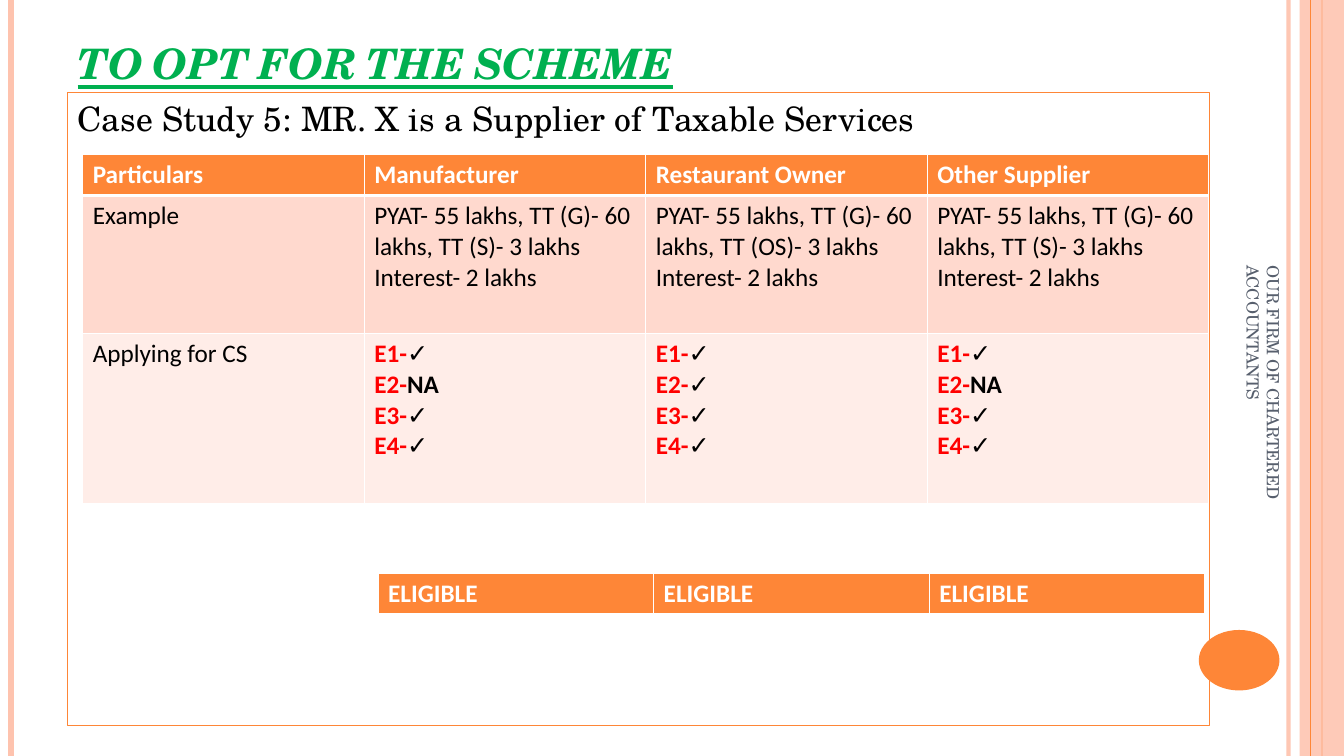
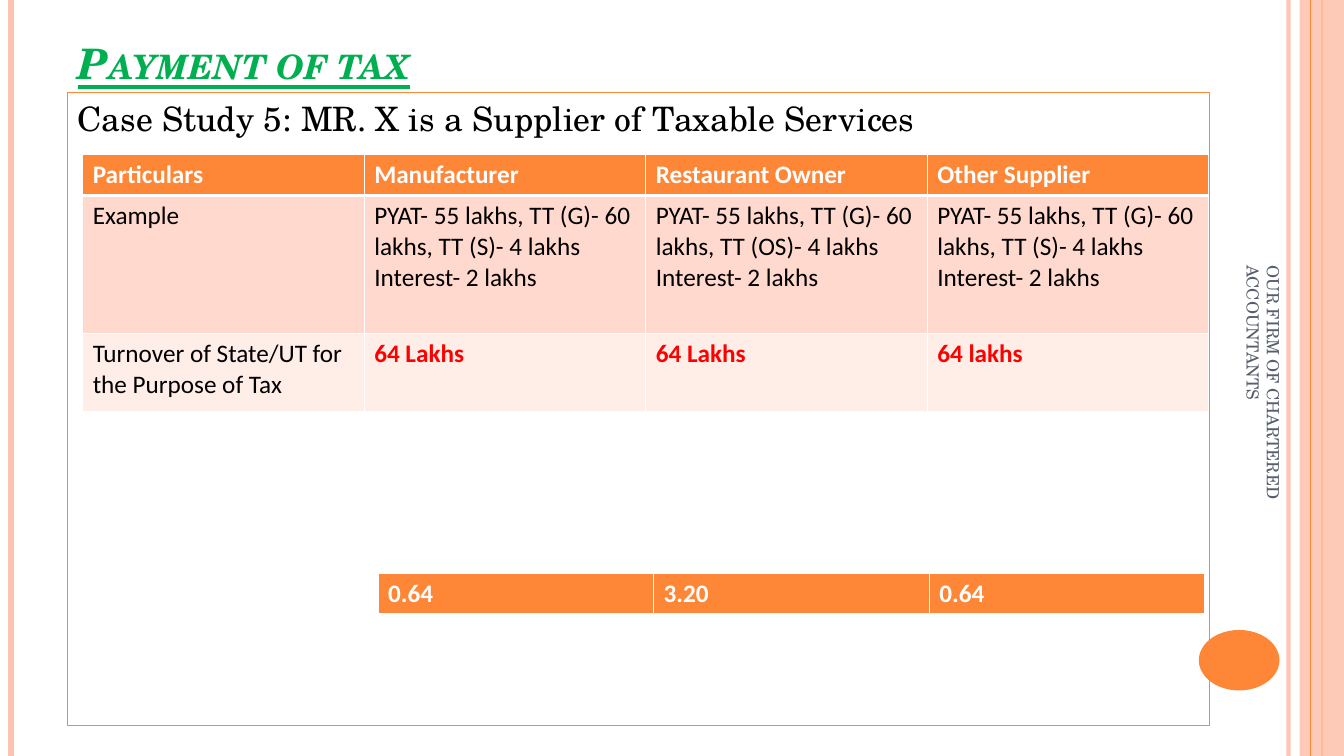
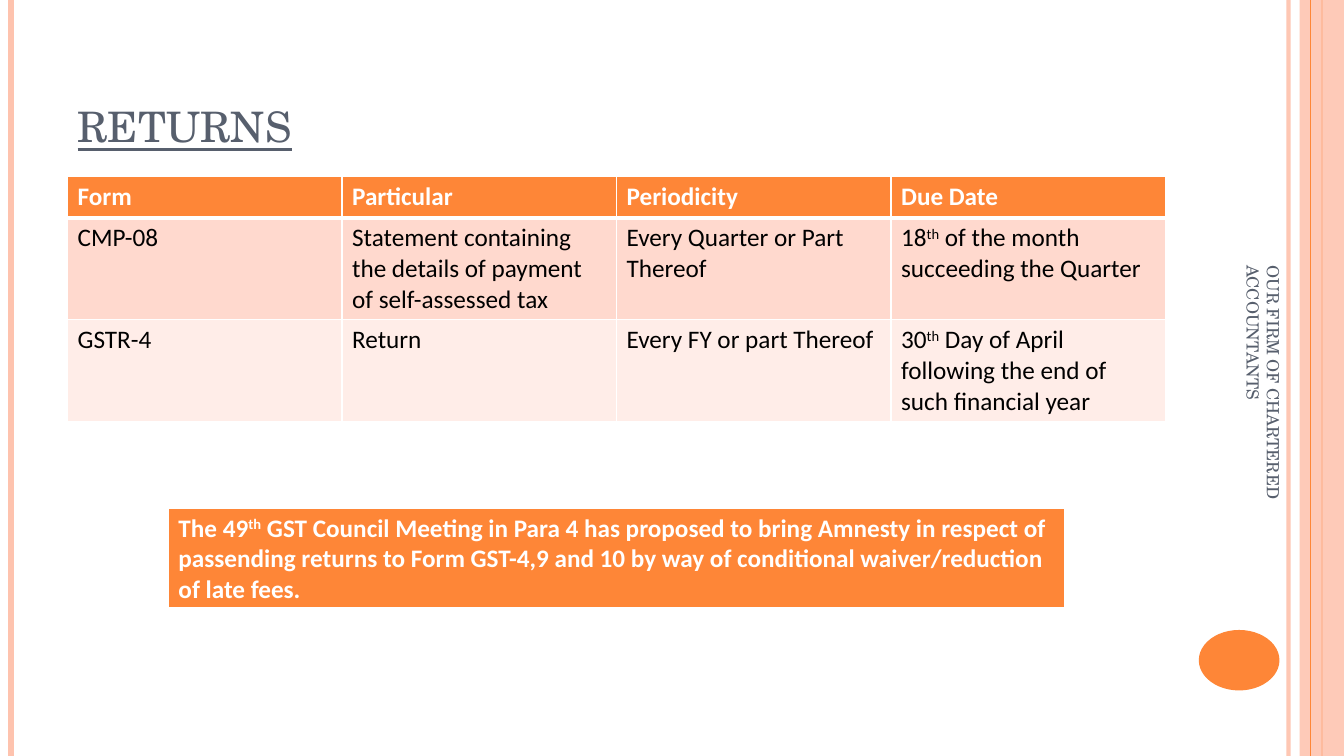
from lxml.etree import SubElement
from pptx import Presentation
from pptx.dml.color import RGBColor
from pptx.enum.shapes import MSO_CONNECTOR, MSO_SHAPE
from pptx.enum.text import MSO_ANCHOR, MSO_AUTO_SIZE, PP_ALIGN
from pptx.oxml.ns import qn
from pptx.util import Pt

EMU_PER_PX = 9144  # 100 px to the inch
WIDTH, HEIGHT = 1333, 750

ORANGE = RGBColor(0xFE, 0x86, 0x37)
PEACH = RGBColor(0xFE, 0xC3, 0xAE)
BAND_DARK = RGBColor(0xFF, 0xD9, 0xCE)
BAND_LIGHT = RGBColor(0xFF, 0xED, 0xE8)
GREEN = RGBColor(0x00, 0xB0, 0x50)
SLATE = RGBColor(0x57, 0x5F, 0x6D)
RED = RGBColor(0xFF, 0x00, 0x00)
BLACK = RGBColor(0x00, 0x00, 0x00)
WHITE = RGBColor(0xFF, 0xFF, 0xFF)

SERIF, SANS = "TeX Gyre Schola", "Calibri"

# Content: a cell is a string or a list of paragraphs;
# a paragraph is a string or a list of (text, style) runs.
FOOTER = "OUR FIRM OF CHARTERED ACCOUNTANTS"
CASE = "Case Study 5: MR. X is a Supplier of Taxable Services"
CASE_HEADER = ["Particulars", "Manufacturer", "Restaurant Owner", "Other Supplier"]
CASE_TABLE, RESULT_TABLE = (82, 153, 1117), (375, 569, 820)  # left, top, width


def example_row(services):
    return ["Example"] + [
        [f"PYAT- 55 lakhs, TT (G)- 60 lakhs, TT ({kind})- {services} lakhs",
         "Interest- 2 lakhs"]
        for kind in ("S", "OS", "S")]


def conditions(*marks):
    return [[(f"E{number}-", "red"), (mark, "strong" if mark == "NA" else "plain")]
            for number, mark in enumerate(marks, 1)]


def red(text):
    return [[(text, "red")]]


def ordinal(before, after):
    return [[(before, "plain"), ("th", "super"), (after, "plain")]]


GOODS_SUPPLIER = conditions("✓", "NA", "✓", "✓")
RESTAURANT = conditions("✓", "✓", "✓", "✓")

SLIDES = [
    dict(title="TO OPT FOR THE SCHEME", body=CASE, tables=[
        (CASE_TABLE, [41, 137, 169], [
            CASE_HEADER,
            example_row(3),
            ["Applying for CS", GOODS_SUPPLIER, RESTAURANT, GOODS_SUPPLIER]]),
        (RESULT_TABLE, [41], [["ELIGIBLE"] * 3])]),
    dict(title="Payment of tax", body=CASE, tables=[
        (CASE_TABLE, [41, 137, 77], [
            CASE_HEADER,
            example_row(4),
            ["Turnover of State/UT for the Purpose of Tax",
             red("64 Lakhs"), red("64 Lakhs"), red("64 lakhs")]]),
        (RESULT_TABLE, [41], [["0.64", "3.20", "0.64"]])]),
    dict(title="RETURNS", body=None, tables=[
        ((67, 175, 1089), [41, 101, 101], [
            ["Form", "Particular", "Periodicity", "Due Date"],
            ["CMP-08", "Statement containing the details of payment of self-assessed tax",
             "Every Quarter or Part Thereof",
             ordinal("18", " of the month succeeding the Quarter")],
            ["GSTR-4", "Return", "Every FY or part Thereof",
             ordinal("30", " Day of April following the end of such financial year")]]),
        ((167, 504, 889), [100], [[ordinal(
            "The 49",
            " GST Council Meeting in Para 4 has proposed to bring Amnesty in respect of "
            "passending returns to Form GST-4,9 and 10 by way of conditional "
            "waiver/reduction of late fees.")]])]),
]

# Side bands, from back to front: x, colour, line width, opacity in percent
LEFT_LINES = [(1278, PEACH, 3, 93), (11, PEACH, 4.5, 100), (1311, ORANGE, 1.5, 100)]
RIGHT_LINE = (1300, ORANGE, 0.75, 100)


def px(*values):
    return [round(value * EMU_PER_PX) for value in values]


def place(shape, left, top, width, height):
    shape.left, shape.top, shape.width, shape.height = px(left, top, width, height)


def style_run(run, face, size, color, bold=False):
    font = run.font
    font.name, font.size, font.bold = face, Pt(size), bold
    font.color.rgb = color


# Shared bands, moved to the slide master
def set_opacity(shape, percent):
    color = shape.element.xpath(".//a:srgbClr")[0]
    SubElement(color, qn("a:alpha")).set("val", str(percent * 1000))


def add_line(slide, x, color, width, opacity):
    line = slide.shapes.add_connector(MSO_CONNECTOR.STRAIGHT, *px(x, 0, x, HEIGHT))
    line.line.color.rgb = color
    line.line.width = Pt(width)
    set_opacity(line, opacity)
    SubElement(line.element.spPr, qn("a:effectLst"))
    return line


def add_solid(slide, preset, box, color, opacity=100):
    shape = slide.shapes.add_shape(preset, *px(*box))
    shape.shadow.inherit = False
    shape.fill.solid()
    shape.fill.fore_color.rgb = color
    shape.line.fill.background()
    set_opacity(shape, opacity)
    return shape


def build_master(presentation, slide):
    bands = [add_line(slide, *line) for line in LEFT_LINES]
    bands.append(add_solid(slide, MSO_SHAPE.RECTANGLE, (1289, 0, 44, HEIGHT), PEACH, 87))
    bands.append(add_line(slide, *RIGHT_LINE))
    bands.append(add_solid(slide, MSO_SHAPE.OVAL, (1189, 625, 80, 60), ORANGE))
    tree = presentation.slide_master.shapes.element
    for index, band in enumerate(bands):
        band.element.xpath(".//p:cNvPr")[0].set("id", str(100 + index))
        tree.insert(2 + index, band.element)


# Title, body and footer
def set_title(slide, text, on_case):
    title = slide.shapes.title
    place(title, 67, 30, 1089, 62 if on_case else 125)
    frame = title.text_frame
    frame.text = text
    frame.auto_size = MSO_AUTO_SIZE.NONE
    frame.vertical_anchor = MSO_ANCHOR.BOTTOM
    paragraph = frame.paragraphs[0]
    paragraph.alignment = PP_ALIGN.LEFT
    run = paragraph.runs[0]
    style_run(run, SERIF, 30, GREEN if on_case else SLATE, on_case)
    run.font.italic = on_case
    run.font.underline = True
    run._r.get_or_add_rPr().set("cap", "small")


def set_body(slide, text):
    body = slide.placeholders[1]
    place(body, 67, 92, 1133, 628)
    body.line.color.rgb = ORANGE
    body.line.width = Pt(0.75)
    body.text_frame.text = text
    body.text_frame.auto_size = MSO_AUTO_SIZE.NONE
    paragraph = body.text_frame.paragraphs[0]
    paragraph.space_before = Pt(6)
    properties = paragraph._p.get_or_add_pPr()
    properties.set("marL", "0")
    properties.set("indent", "0")
    SubElement(properties, qn("a:buNone"))
    style_run(paragraph.runs[0], SERIF, 24, BLACK)


def add_footer(slide):
    footer = slide.shapes.add_textbox(*px(1078, 402, 350, 53))
    footer.rotation = 90
    frame = footer.text_frame
    frame.word_wrap = True
    frame.vertical_anchor = MSO_ANCHOR.MIDDLE
    frame.text = FOOTER
    style_run(frame.paragraphs[0].runs[0], SERIF, 12, SLATE)


# Tables
def set_borders(cell, top, bottom):
    properties = cell._tc.get_or_add_tcPr()
    sides = [("lnL", 1), ("lnR", 1), ("lnT", top), ("lnB", bottom)]
    for index, (side, width) in enumerate(sides):
        border = SubElement(properties, qn(f"a:{side}"), w=str(Pt(width)))
        fill = SubElement(border, qn("a:solidFill"))
        SubElement(fill, qn("a:srgbClr"), val=str(WHITE))
        properties.insert(index, border)


def fill_cell(cell, content, is_header):
    paragraphs = [content] if isinstance(content, str) else content
    for index, runs in enumerate(paragraphs):
        frame = cell.text_frame
        paragraph = frame.add_paragraph() if index else frame.paragraphs[0]
        for text, style in [(runs, "plain")] if isinstance(runs, str) else runs:
            run = paragraph.add_run()
            run.text = text
            color = WHITE if is_header else RED if style == "red" else BLACK
            style_run(run, SANS, 18, color, is_header or style in ("red", "strong"))
            if style == "super":
                run._r.get_or_add_rPr().set("baseline", "30000")


def add_table(slide, box, heights, rows):
    left, top, width = box
    columns = len(rows[0])
    frame = slide.shapes.add_table(len(rows), columns, *px(left, top, width, sum(heights)))
    table = frame.table
    table.first_row = table.horz_banding = False
    for column in table.columns:
        column.width = px(width / columns)[0]
    for row_index, row in enumerate(rows):
        table.rows[row_index].height = px(heights[row_index])[0]
        for column_index, content in enumerate(row):
            cell = table.cell(row_index, column_index)
            cell.fill.solid()
            cell.fill.fore_color.rgb = (ORANGE, BAND_DARK, BAND_LIGHT)[row_index]
            set_borders(cell, 3 if row_index == 1 else 1, 1 if row_index else 3)
            fill_cell(cell, content, row_index == 0)


def main():
    presentation = Presentation()
    presentation.slide_width, presentation.slide_height = px(WIDTH, HEIGHT)
    layouts = presentation.slide_layouts
    title_and_body, title_only = layouts[1], layouts[5]
    for index, content in enumerate(SLIDES):
        on_case = content["body"] is not None
        slide = presentation.slides.add_slide(title_and_body if on_case else title_only)
        if index == 0:
            build_master(presentation, slide)
        set_title(slide, content["title"], on_case)
        if on_case:
            set_body(slide, content["body"])
        add_footer(slide)
        for table in content["tables"]:
            add_table(slide, *table)
    presentation.save("out.pptx")


if __name__ == "__main__":
    main()
